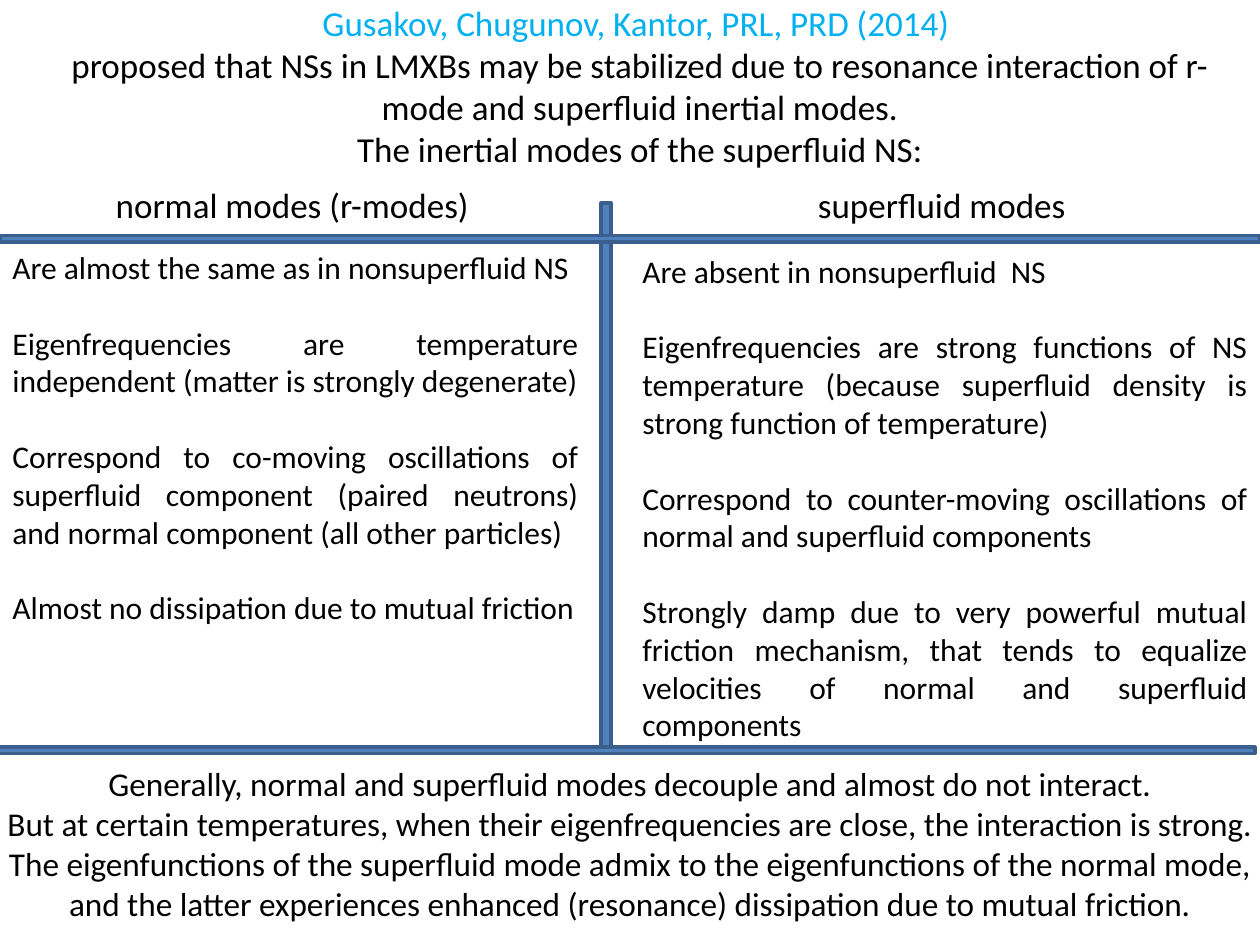
from pptx import Presentation
from pptx.dml.color import RGBColor
from pptx.enum.shapes import MSO_SHAPE
from pptx.enum.text import MSO_AUTO_SIZE, PP_ALIGN
from pptx.util import Inches, Pt

CENTER, JUSTIFY = PP_ALIGN.CENTER, PP_ALIGN.JUSTIFY
GROW = MSO_AUTO_SIZE.SHAPE_TO_FIT_TEXT
RECTANGLE = MSO_SHAPE.RECTANGLE
BLANK_LAYOUT = 6

BLACK, CYAN = "000000", "00B0F0"
BAR_FILL, BAR_LINE = "4F81BD", "3A5F8C"
BAR_THICKNESS = 0.05

INTRO = [
    "Gusakov, Chugunov, Kantor, PRL, PRD (2014) ",
    "proposed that NSs in LMXBs may be stabilized due to resonance interaction "
    "of r-mode and superfluid inertial modes.",
    "The inertial modes of the superfluid NS:",
]
NORMAL_MODES = [
    "Are almost the same as in nonsuperfluid NS",
    "Eigenfrequencies are temperature independent (matter is strongly degenerate)",
    "Correspond to co-moving oscillations of superfluid component (paired neutrons) "
    "and normal component (all other particles)",
    "Almost no dissipation due to mutual friction",
]
SUPERFLUID_MODES = [
    "Are absent in nonsuperfluid  NS",
    "Eigenfrequencies are strong functions of NS temperature (because superfluid "
    "density is strong function of temperature)",
    "Correspond to counter-moving oscillations of normal and superfluid components",
    "Strongly damp due to very powerful mutual friction mechanism, that tends to "
    "equalize velocities of normal and superfluid components",
]
CONCLUSION = [
    "Generally, normal and superfluid modes decouple and almost do not interact.",
    "But at certain temperatures, when their eigenfrequencies are close, "
    "the interaction is strong.",
    "The eigenfunctions of the superfluid mode admix to the eigenfunctions of the "
    "normal mode, and the latter experiences enhanced (resonance) dissipation "
    "due to mutual friction.",
]


def color(hex_value):
    return RGBColor.from_string(hex_value)


def add_text(page, box, lines, size, align=CENTER, gap=0, first_color=BLACK):
    """Place paragraphs in a box; gap is the space in points between them."""
    text_box = page.shapes.add_textbox(*map(Inches, box))
    frame = text_box.text_frame
    for name, value in {"word_wrap": True, "auto_size": GROW}.items():
        setattr(frame, name, value)
    for index, line in enumerate(lines):
        para = frame.add_paragraph() if index else frame.paragraphs[0]
        para.alignment = align
        if gap and index < len(lines) - 1:
            para.space_after = Pt(gap)
        span = para.add_run()
        span.text = line
        for name, value in {"name": "Calibri", "size": Pt(size)}.items():
            setattr(span.font, name, value)
        span.font.color.rgb = color(BLACK if index else first_color)


def add_bar(page, box):
    bar = page.shapes.add_shape(RECTANGLE, *map(Inches, box))
    bar.shadow.inherit = False
    bar.fill.solid()
    bar.fill.fore_color.rgb = color(BAR_FILL)
    bar.line.color.rgb = color(BAR_LINE)
    bar.line.width = Pt(2)


def add_column(page, heading_box, heading, body_box, lines):
    add_text(page, heading_box, [heading], 20)
    add_text(page, body_box, lines, 18, align=JUSTIFY, gap=21.6)


def build_page(page):
    # Introduction
    add_text(page, (0.16, -0.04, 9.84, 1.45), INTRO, 20, first_color=CYAN)

    # Comparison columns
    add_column(page, (0.35, 1.41, 3.94, 0.44), "normal modes (r-modes)",
               (0, 1.92, 4.69, 3.43), NORMAL_MODES)
    add_column(page, (5.31, 1.41, 4.33, 0.44), "superfluid modes",
               (5, 1.95, 5, 4.04), SUPERFLUID_MODES)

    # Divider bars: between columns, below headings, above conclusion
    add_bar(page, (4.77, 1.61, 0.08, 4.33))
    add_bar(page, (0, 1.87, 10, BAR_THICKNESS))
    add_bar(page, (-0.04, 5.93, 10, BAR_THICKNESS))

    # Conclusion
    add_text(page, (-0.08, 6.01, 10.16, 1.38), CONCLUSION, 19)


def main():
    deck = Presentation()
    deck.slide_width, deck.slide_height = Inches(10), Inches(7.5)
    build_page(deck.slides.add_slide(deck.slide_layouts[BLANK_LAYOUT]))
    deck.save("out.pptx")


if __name__ == "__main__":
    main()
